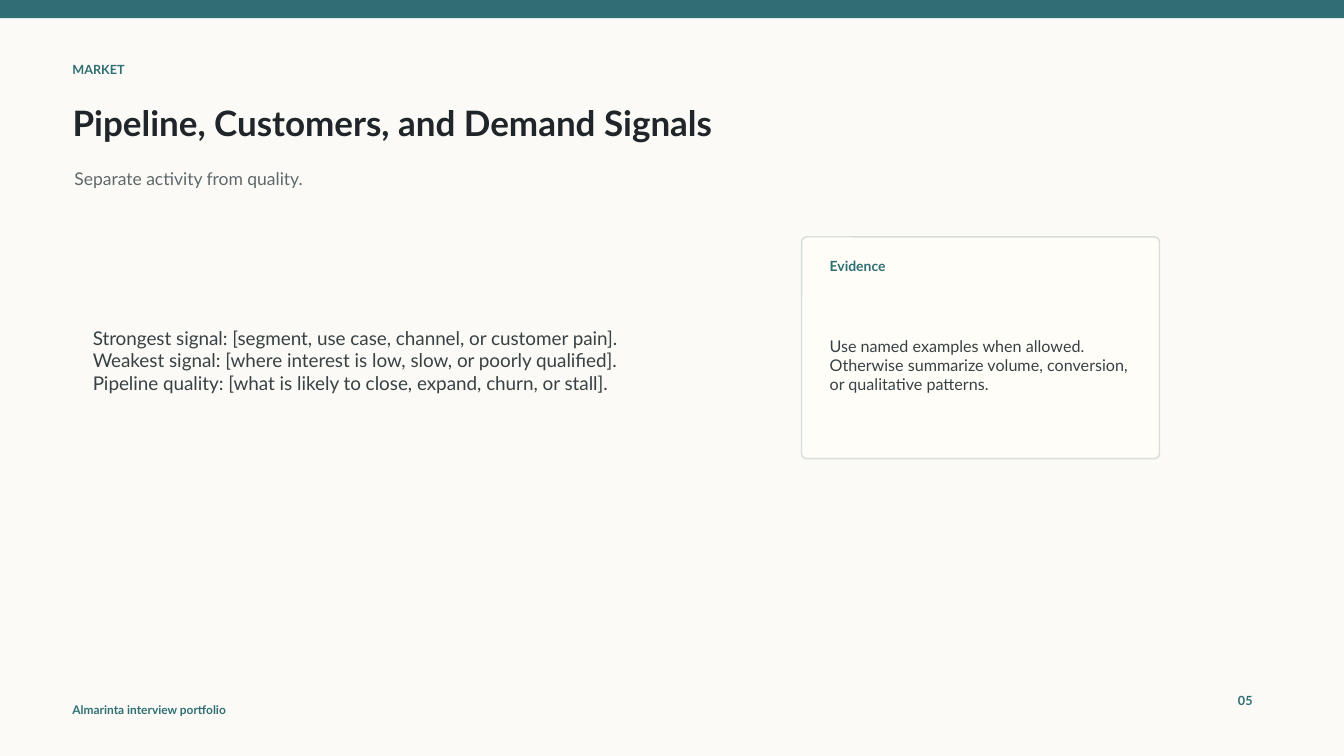
from dataclasses import dataclass
from pptx import Presentation
from pptx.dml.color import RGBColor
from pptx.enum.shapes import MSO_SHAPE
from pptx.enum.text import MSO_ANCHOR, MSO_AUTO_SIZE, PP_ALIGN
from pptx.oxml.xmlchemy import OxmlElement
from pptx.util import Inches, Pt


@dataclass(frozen=True)
class Theme:
    """Hold the colours, type sizes and font of the deck."""
    font: str = "Lato"
    paper: str = "FBFAF6"
    teal: str = "2F6F73"
    ink: str = "1F2528"
    muted: str = "5E686B"
    body: str = "384144"
    card: str = "FFFDF8"
    rule: str = "D8DDD7"
    title: float = 25
    list: float = 13.5
    sub: float = 12.5
    note: float = 11.5
    label: float = 10
    tag: float = 9
    foot: float = 8.5


THEME = Theme()


def color(code):
    """Turn a hex code into a colour."""
    return RGBColor.from_string(code)


def place(shape, box):
    """Move a shape to a box given in inches."""
    shape.left, shape.top, shape.width, shape.height = map(Inches, box)


def write(shape, lines, size, tint, bold=False):
    """Fill a text shape with left-aligned lines, one paragraph each."""
    frame = shape.text_frame
    frame.word_wrap = True
    frame.auto_size = MSO_AUTO_SIZE.NONE
    frame.vertical_anchor = MSO_ANCHOR.MIDDLE
    for i, line in enumerate(lines):
        para = frame.add_paragraph() if i else frame.paragraphs[0]
        para.alignment = PP_ALIGN.LEFT
        para.space_before = Pt(0)
        run = para.add_run()
        run.text = line
        font = run.font
        font.name, font.size, font.bold = THEME.font, Pt(size), bold
        font.color.rgb = color(tint)


def label(slide, box, text, size, tint, bold=False):
    """Add a one-paragraph text box."""
    shape = slide.shapes.add_textbox(*map(Inches, box))
    write(shape, [text], size, tint, bold)


def panel(slide, kind, box, fill):
    """Add a filled shape without outline or shadow."""
    shape = slide.shapes.add_shape(kind, *map(Inches, box))
    shape.shadow.inherit = False
    shape.fill.solid()
    shape.fill.fore_color.rgb = color(fill)
    shape.line.fill.background()
    return shape


def frame(slide, box, foot, page):
    """Draw the background, top band, footer and page number."""
    x, y, w, h = box
    slide.background.fill.solid()
    slide.background.fill.fore_color.rgb = color(THEME.paper)
    panel(slide, MSO_SHAPE.RECTANGLE, (x, y, w, 0.18), THEME.teal)
    label(slide, (x + 0.62, y + h - 0.56, 3, 0.2), foot, THEME.foot, THEME.teal, True)
    label(slide, (x + w - 1.15, y + h - 0.68, 0.5, 0.25), page, THEME.tag, THEME.teal, True)


def header(slide, box, tag, title, sub):
    """Set the section tag, title and subtitle."""
    x, y, w, h = box
    label(slide, (x, y, 4.8, 0.22), tag, THEME.tag, THEME.teal, True)
    place(slide.shapes.title, (x, y + 0.36, w - 1, 0.55))
    write(slide.shapes.title, [title], THEME.title, THEME.ink, True)
    label(slide, (x + 0.02, y + h - 0.42, w, 0.42), sub, THEME.sub, THEME.muted)


def signals(slide, box, lines):
    """Set the unbulleted list of signals."""
    body = slide.placeholders[1]
    place(body, box)
    write(body, lines, THEME.list, THEME.body)
    for para in body.text_frame.paragraphs:
        props = para._p.get_or_add_pPr()
        props.set("marL", "0")
        props.set("indent", "0")
        props.append(OxmlElement("a:buNone"))


def card(slide, box, head, text):
    """Draw a rounded card with a heading and a note."""
    x, y, w, h = box
    shape = panel(slide, MSO_SHAPE.ROUNDED_RECTANGLE, box, THEME.card)
    shape.adjustments[0] = 0.023
    shape.line.color.rgb = color(THEME.rule)
    shape.line.width = Pt(1)
    pad = 0.18
    label(slide, (x + pad, y + 0.16, w - 2 * pad, 0.25), head, THEME.label, THEME.teal, True)
    label(slide, (x + pad, y + 0.48, w - 2 * pad, h - 0.62), text, THEME.note, THEME.body)


def main():
    """Build and save the slide."""
    deck = Presentation()
    deck.slide_width, deck.slide_height = Inches(13.33), Inches(7.5)
    slide = deck.slides.add_slide(deck.slide_layouts[1])
    frame(slide, (0, 0, 13.33, 7.5), "Almarinta interview portfolio", "05")
    header(slide, (0.62, 0.58, 10.8, 1.4), "MARKET",
           "Pipeline, Customers, and Demand Signals", "Separate activity from quality.")
    signals(slide, (0.82, 2.25, 6.75, 2.65), [
        "Strongest signal: [segment, use case, channel, or customer pain].",
        "Weakest signal: [where interest is low, slow, or poorly qualified].",
        "Pipeline quality: [what is likely to close, expand, churn, or stall].",
    ])
    card(slide, (7.95, 2.35, 3.55, 2.2), "Evidence",
         "Use named examples when allowed. Otherwise summarize volume, "
         "conversion, or qualitative patterns.")
    deck.save("out.pptx")


if __name__ == "__main__":
    main()
